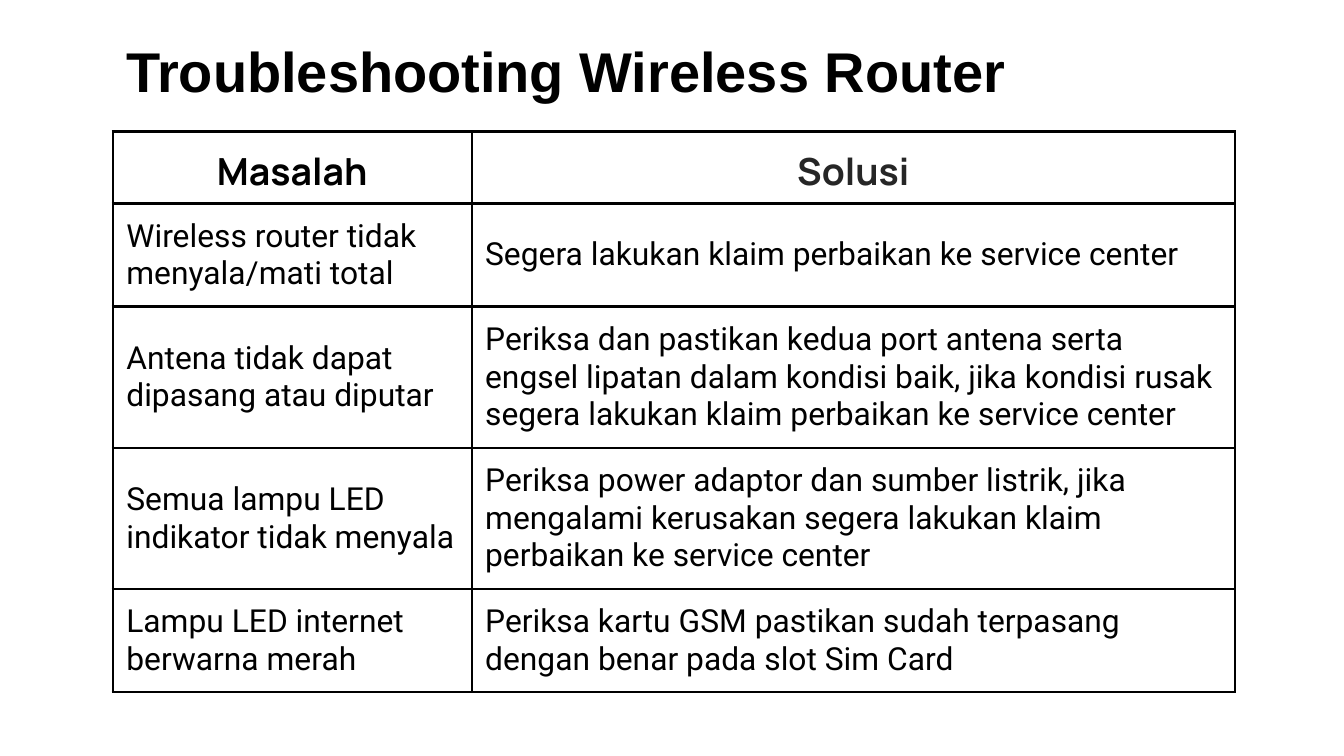
from lxml import etree
from pptx import Presentation
from pptx.dml.color import RGBColor
from pptx.enum.text import MSO_ANCHOR, PP_ALIGN
from pptx.oxml.ns import qn
from pptx.util import Inches, Pt

MIDDLE = MSO_ANCHOR.MIDDLE
LEFT, CENTER = PP_ALIGN.LEFT, PP_ALIGN.CENTER

# Content
TITLE = "Troubleshooting Wireless Router"
HEADERS = ["Masalah", "Solusi"]
PROBLEMS = [
    ("Wireless router tidak menyala/mati total",
     "Segera lakukan klaim perbaikan ke service center"),
    ("Antena tidak dapat dipasang atau diputar",
     "Periksa dan pastikan kedua port antena serta engsel lipatan dalam kondisi baik, "
     "jika kondisi rusak segera lakukan klaim perbaikan ke service center"),
    ("Semua lampu LED indikator tidak menyala",
     "Periksa power adaptor dan sumber listrik, jika mengalami kerusakan "
     "segera lakukan klaim perbaikan ke service center"),
    ("Lampu LED internet berwarna merah",
     "Periksa kartu GSM pastikan sudah terpasang dengan benar pada slot Sim Card"),
]

THEME = {
    "black": "000000", "gray": "262626",
    "title": {"font": "Arial", "size": 30, "bold": True},
    "header": {"font": "Manrope", "size": 20, "bold": True, "align": CENTER},
    "body": {"font": "Roboto", "size": 17},
    "border": 1.5,
}

# Layout in inches, on a 16:9 page
PAGE_WIDTH = 10
PAGE_HEIGHT = PAGE_WIDTH * 9 / 16
MARGIN, INSET = 0.84, 0.1
COLUMN_WIDTHS = [2.67, 5.68]
HEADER_HEIGHT, ROW_HEIGHT = 0.36, 0.64
TABLE_TOP, FRAME_SIZE = 0.98, 3.28


def write(frame, text, font, size, color=THEME["black"], bold=False, align=LEFT):
    para = frame.paragraphs[0]
    para.alignment = align
    span = para.add_run()
    span.text = text
    span.font.name = font
    span.font.size = Pt(size)
    span.font.bold = bold
    span.font.color.rgb = RGBColor.from_string(color)


def set_insets(box):
    box.margin_left = box.margin_right = Inches(INSET)
    box.margin_top = box.margin_bottom = Inches(INSET)
    box.vertical_anchor = MIDDLE


def add_borders(cell):
    properties = cell._tc.get_or_add_tcPr()
    for position, side in enumerate(("a:lnL", "a:lnR", "a:lnT", "a:lnB")):
        line = etree.Element(qn(side), w=str(Pt(THEME["border"])))
        fill = etree.SubElement(line, qn("a:solidFill"))
        etree.SubElement(fill, qn("a:srgbClr"), val=THEME["black"])
        properties.insert(position, line)


deck = Presentation()
deck.slide_width, deck.slide_height = Inches(PAGE_WIDTH), Inches(PAGE_HEIGHT)
page = deck.slides.add_slide(deck.slide_layouts[6])

# Title
title_box = page.shapes.add_textbox(Inches(MARGIN), Inches(0.24), Inches(8.15), Inches(0.57))
title_box.text_frame.word_wrap = True
set_insets(title_box.text_frame)
write(title_box.text_frame, TITLE, **THEME["title"])

# Table of problems and solutions
rows = [HEADERS, *PROBLEMS]
heights = [HEADER_HEIGHT] + [ROW_HEIGHT] * len(PROBLEMS)
table_frame = page.shapes.add_table(
    len(rows), len(HEADERS), Inches(MARGIN), Inches(TABLE_TOP),
    Inches(FRAME_SIZE), Inches(FRAME_SIZE))
table = table_frame.table
table.first_row = table.horz_banding = False
for column, width in zip(table.columns, COLUMN_WIDTHS):
    column.width = Inches(width)

for row_index, texts in enumerate(rows):
    table.rows[row_index].height = Inches(heights[row_index])
    style = THEME["body"] if row_index else THEME["header"]
    for column_index, text in enumerate(texts):
        cell = table.cell(row_index, column_index)
        set_insets(cell)
        cell.fill.background()
        add_borders(cell)
        is_solution_header = row_index == 0 and column_index == 1
        color = THEME["gray"] if is_solution_header else THEME["black"]
        write(cell.text_frame, text, color=color, **style)

# Changing columns and rows resizes the frame, so its size is set last
table_frame.width = table_frame.height = Inches(FRAME_SIZE)

deck.save("out.pptx")
